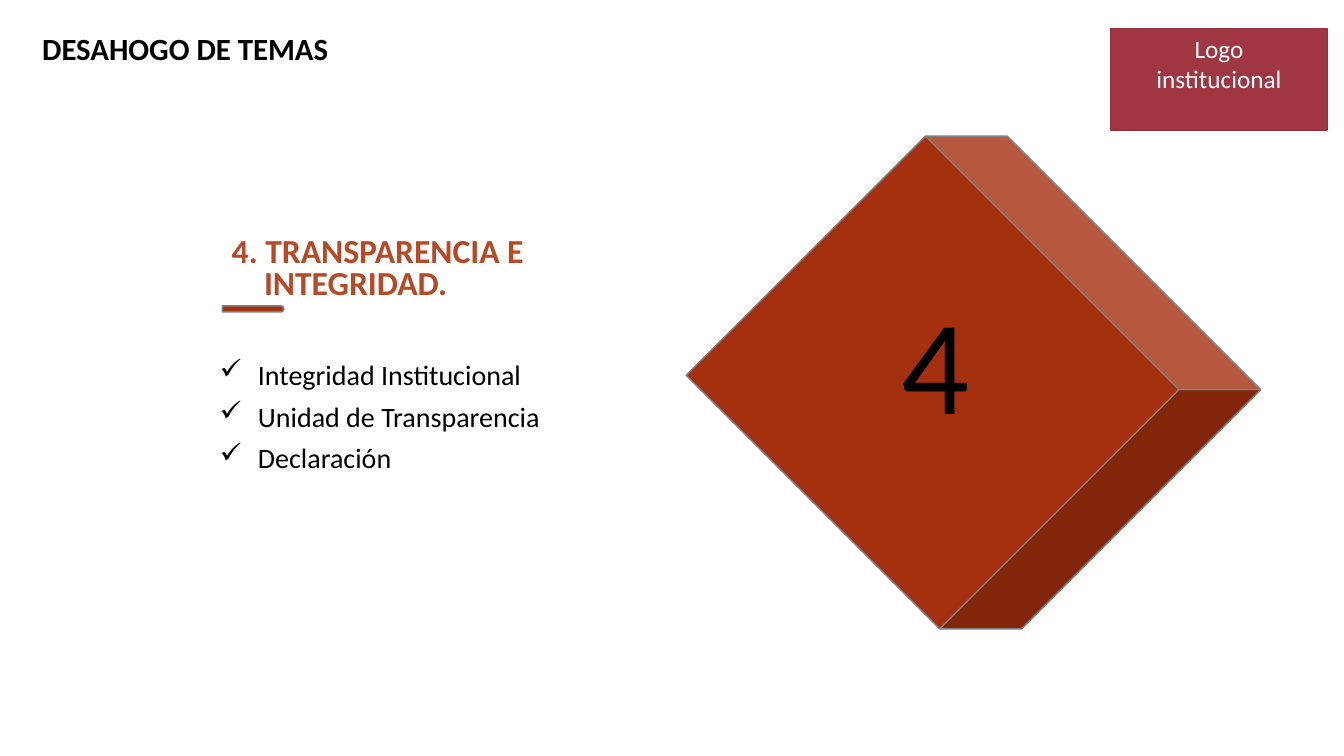
"""Build the "Desahogo de temas" slide on transparency and integrity."""
import pptx
import pptx.dml.color
import pptx.enum.shapes
import pptx.enum.text
import pptx.oxml
import pptx.oxml.ns
import pptx.util

Inches = pptx.util.Inches
RGBColor = pptx.dml.color.RGBColor
SHAPE = pptx.enum.shapes.MSO_SHAPE
ALIGN = pptx.enum.text.PP_ALIGN

BLACK = RGBColor(0x00, 0x00, 0x00)
WHITE = RGBColor(0xFF, 0xFF, 0xFF)
GRAY = RGBColor(0x80, 0x80, 0x80)
RUST = RGBColor(0xA5, 0x30, 0x0F)
ORANGE = RGBColor(0xB6, 0x49, 0x26)
WINE = RGBColor(0x9D, 0x2E, 0x3B)


def write(shape, lines, size, color, bold=False, align=ALIGN.LEFT,
          spacing=1.0, hanging=0, bullet=None, wrap=True):
    """Fill a shape with top-anchored paragraphs of one style."""
    frame = shape.text_frame
    frame.word_wrap = wrap
    frame.vertical_anchor = pptx.enum.text.MSO_ANCHOR.TOP
    frame.text = "\n".join(lines)
    for paragraph in frame.paragraphs:
        paragraph.alignment = align
        paragraph.line_spacing = spacing
        properties = paragraph._p.get_or_add_pPr()
        if hanging:
            properties.set("marL", str(Inches(hanging)))
            properties.set("indent", str(-Inches(hanging)))
        if bullet:
            mark = pptx.oxml.parse_xml(
                f'<a:buChar {pptx.oxml.ns.nsdecls("a")} char="{bullet}"/>')
            properties.append(mark)
        for run in paragraph.runs:
            run.font.name = "Calibri"
            run.font.size = pptx.util.Pt(size)
            run.font.bold = bold
            run.font.color.rgb = color


def add_text(slide, box, lines, size, color, **style):
    """Add a text box at the given left, top, width and height."""
    write(slide.shapes.add_textbox(*map(Inches, box)), lines, size, color, **style)


def add_block(slide, preset, box, fill, line, rotation=0, adjustments=()):
    """Add a flat preset shape with a one-point outline."""
    block = slide.shapes.add_shape(preset, *map(Inches, box))
    block.shadow.inherit = False
    block.rotation = rotation
    block.fill.solid()
    block.fill.fore_color.rgb = fill
    block.line.color.rgb = line
    block.line.width = pptx.util.Pt(1)
    for index, value in enumerate(adjustments):
        block.adjustments[index] = value
    return block


def set_opacity(block, percent):
    """Make the solid fill of a shape partly transparent."""
    color = block._element.spPr.find(
        f'{pptx.oxml.ns.qn("a:solidFill")}/{pptx.oxml.ns.qn("a:srgbClr")}')
    color.append(pptx.oxml.parse_xml(
        f'<a:alpha {pptx.oxml.ns.nsdecls("a")} val="{percent * 1000}"/>'))


def main():
    """Compose the slide and save it."""
    deck = pptx.Presentation()
    deck.slide_width, deck.slide_height = Inches(13.33), Inches(7.5)
    slide = deck.slides.add_slide(deck.slide_layouts[6])

    add_text(slide, (2.2, 2.31, 3.32, 0.76), ["4. TRANSPARENCIA E INTEGRIDAD."],
             24, ORANGE, bold=True, spacing=0.8, hanging=0.32)
    add_text(slide, (2.08, 3.41, 3.85, 1.33),
             ["Integridad Institucional", "Unidad de Transparencia", "Declaración"],
             20, BLACK, spacing=1.25, hanging=0.38, bullet="✓")
    add_block(slide, SHAPE.CUBE, (7.59, 1.83, 4.13, 3.93), RUST, GRAY,
              rotation=45, adjustments=(0.146,))
    add_text(slide, (8.4, 3.04, 1.76, 1.43), ["4"], 96, BLACK,
             align=ALIGN.CENTER, spacing=0.8)
    add_block(slide, SHAPE.ROUND_2_SAME_RECTANGLE, (2.48, 2.76, 0.06, 0.61),
              RUST, GRAY, rotation=90, adjustments=(0.5, 0))
    add_text(slide, (0.32, 0.25, 3.07, 0.47), ["DESAHOGO DE TEMAS"], 22, BLACK,
             bold=True, wrap=False)
    logo_space = add_block(slide, SHAPE.RECTANGLE, (11.02, 0.28, 2.14, 1.01), WINE, WINE)
    set_opacity(logo_space, 96)
    write(logo_space, ["Logo", "institucional"], 18, WHITE, align=ALIGN.CENTER)

    deck.save("out.pptx")


if __name__ == "__main__":
    main()
